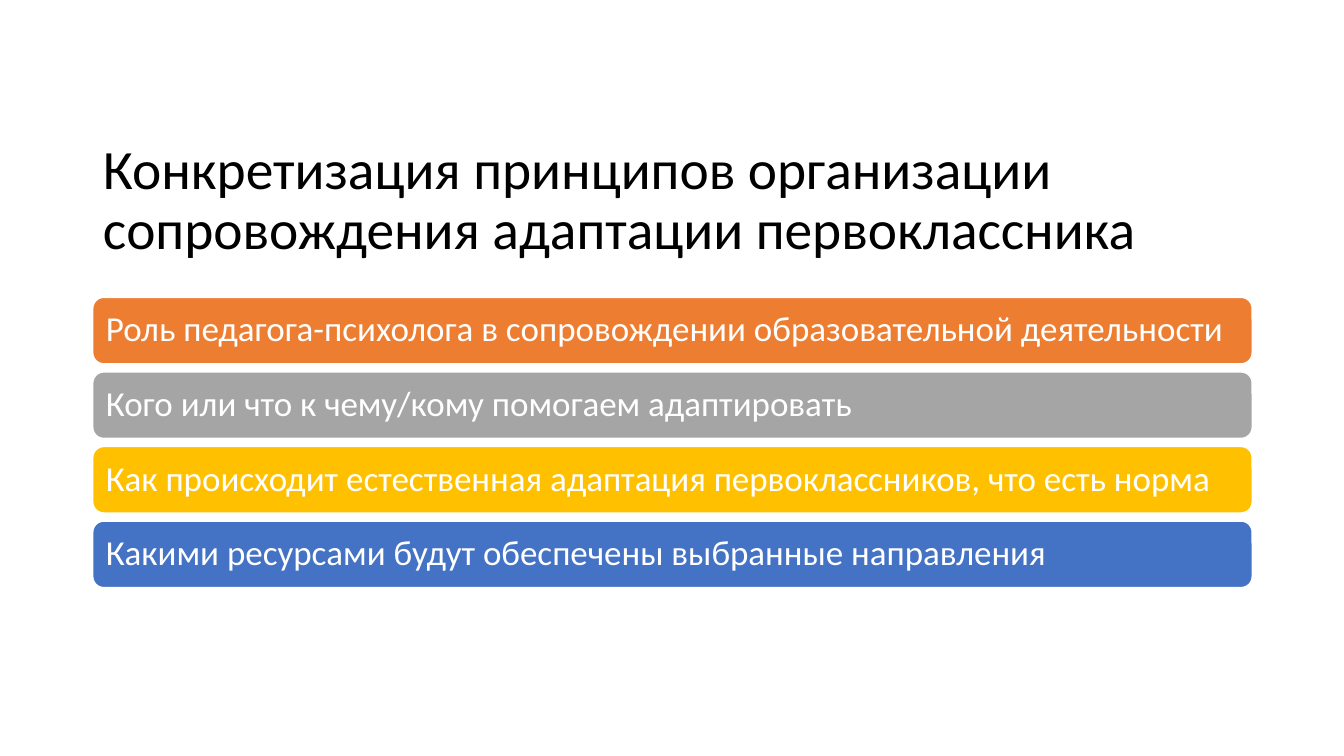
import pptx
import pptx.util
import pptx.dml.color
import pptx.enum.shapes
import pptx.enum.text

Inches = pptx.util.Inches
Pt = pptx.util.Pt
RGBColor = pptx.dml.color.RGBColor
LEFT = pptx.enum.text.PP_ALIGN.LEFT
MIDDLE = pptx.enum.text.MSO_ANCHOR.MIDDLE

BLACK = RGBColor(0x00, 0x00, 0x00)
WHITE = RGBColor(0xFF, 0xFF, 0xFF)
ORANGE = RGBColor(0xED, 0x7D, 0x31)
GRAY = RGBColor(0xA5, 0xA5, 0xA5)
GOLD = RGBColor(0xFF, 0xC0, 0x00)
BLUE = RGBColor(0x44, 0x72, 0xC4)

PRINCIPLES = [
    ("Роль педагога-психолога в сопровождении образовательной деятельности", ORANGE),
    ("Кого или что к чему/кому помогаем адаптировать", GRAY),
    ("Как происходит естественная адаптация первоклассников, что есть норма", GOLD),
    ("Какими ресурсами будут обеспечены выбранные направления", BLUE),
]


def set_text(shape, text, size, color):
    tf = shape.text_frame
    tf.text = text
    tf.word_wrap = True
    tf.auto_size = pptx.enum.text.MSO_AUTO_SIZE.NONE
    tf.vertical_anchor = MIDDLE
    p = tf.paragraphs[0]
    p.alignment = LEFT
    p.line_spacing = 0.9
    r = p.runs[0]
    r.font.name = "Calibri"
    r.font.size = Pt(size)
    r.font.color.rgb = color


prs = pptx.Presentation()
prs.slide_width = Inches(13.33)
prs.slide_height = Inches(7.5)
s = prs.slides.add_slide(prs.slide_layouts[5])

title = s.shapes.title
title.left, title.top = Inches(0.92), Inches(1.39)
title.width, title.height = Inches(11.5), Inches(1.22)
set_text(title, "Конкретизация принципов организации сопровождения адаптации первоклассника", 39.6, BLACK)

for i, (text, color) in enumerate(PRINCIPLES):
    bar = s.shapes.add_shape(
        pptx.enum.shapes.MSO_SHAPE.ROUNDED_RECTANGLE,
        Inches(0.92), Inches(2.95 + 0.74 * i), Inches(11.5), Inches(0.66))
    bar.shadow.inherit = False
    bar.fill.solid()
    bar.fill.fore_color.rgb = color
    bar.line.color.rgb = WHITE
    bar.line.width = Pt(1)
    set_text(bar, text, 25, WHITE)
    tf = bar.text_frame
    tf.margin_left = tf.margin_right = Inches(0.1)
    tf.margin_top = tf.margin_bottom = Inches(0.1)

prs.save("out.pptx")
